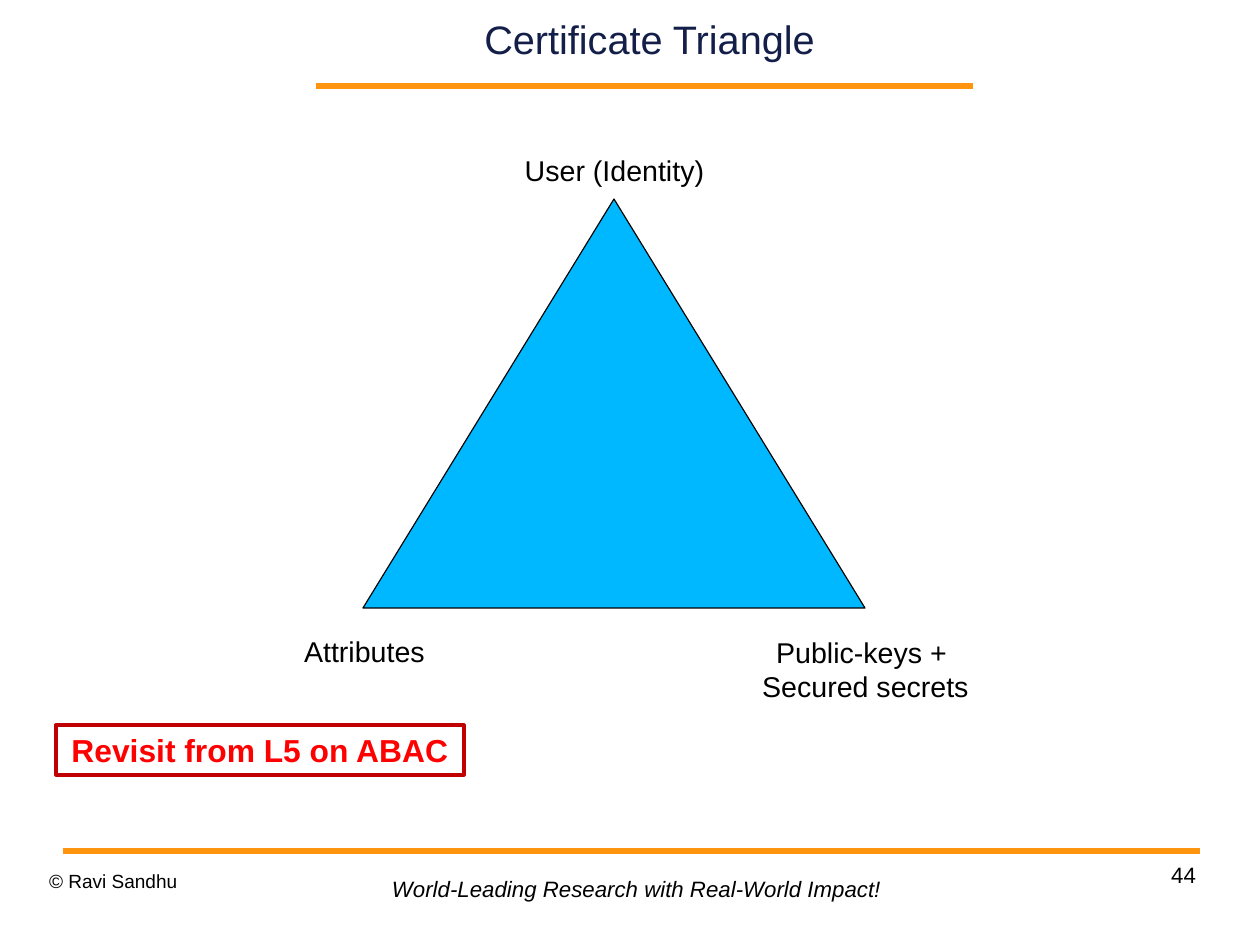
"""Build the Certificate Triangle slide."""
import pptx
import pptx.dml.color
import pptx.enum.shapes
import pptx.enum.text
import pptx.util
import lxml.etree

PX = 8000
SHAPE = pptx.enum.shapes.MSO_SHAPE
ALIGN = pptx.enum.text.PP_ALIGN
ANCHOR = pptx.enum.text.MSO_ANCHOR
FIT = pptx.enum.text.MSO_AUTO_SIZE
BLACK = "000000"

deck = pptx.Presentation()
deck.slide_width = 1260 * PX
deck.slide_height = 945 * PX
slide = deck.slides.add_slide(deck.slide_layouts[6])


def color(hex_code):
    return pptx.dml.color.RGBColor.from_string(hex_code)


def write(text, box, size=18, ink=BLACK, bold=False, italic=False,
          align=ALIGN.CENTER, anchor=ANCHOR.TOP, inset=(0, 0), wrap=True,
          grow=False, spacing=None, outline=None):
    bounds = [length * PX for length in box]
    if outline:
        holder = slide.shapes.add_shape(SHAPE.RECTANGLE, *bounds)
        holder.shadow.inherit = False
        holder.fill.background()
        holder.line.color.rgb = color(outline)
        holder.line.width = pptx.util.Pt(2)
    else:
        holder = slide.shapes.add_textbox(*bounds)
    frame = holder.text_frame
    frame.word_wrap = wrap
    frame.auto_size = FIT.SHAPE_TO_FIT_TEXT if grow else FIT.NONE
    frame.vertical_anchor = anchor
    frame.margin_left = frame.margin_right = inset[0] * PX
    frame.margin_top = frame.margin_bottom = inset[1] * PX
    frame.text = text
    for paragraph in frame.paragraphs:
        paragraph.alignment = align
        paragraph.line_spacing = spacing
        for run in paragraph.runs:
            run.font.name = "Arial"
            run.font.size = pptx.util.Pt(size)
            run.font.bold = bold
            run.font.italic = italic
            run.font.color.rgb = color(ink)


for left, right, y in [(316, 973, 86), (63, 1200, 851)]:
    rule = slide.shapes.add_connector(
        pptx.enum.shapes.MSO_CONNECTOR.STRAIGHT, left * PX, y * PX, right * PX, y * PX)
    rule.line.color.rgb = color("FF950E")
    rule.line.width = pptx.util.Pt(4.31)
    lxml.etree.SubElement(rule._element.spPr, pptx.oxml.ns.qn("a:effectLst"))

write("44", (902, 861, 294, 65), size=14, align=ALIGN.RIGHT, spacing=1.01)
write("© Ravi Sandhu", (49, 869, 294, 49), size=12, align=ALIGN.LEFT, spacing=1.01)
write("World-Leading Research with Real-World Impact!", (382, 870, 523, 38),
      size=14, italic=True, align=ALIGN.LEFT, inset=(10, 5), wrap=False, grow=True)
write("Certificate Triangle", (325, 7, 649, 64), size=25, ink="131F49",
      anchor=ANCHOR.MIDDLE)

triangle = slide.shapes.add_shape(
    SHAPE.ISOSCELES_TRIANGLE, 363 * PX, 199 * PX, 502 * PX, 409 * PX)
triangle.shadow.inherit = False
triangle.fill.solid()
triangle.fill.fore_color.rgb = color("00B8FF")
triangle.line.color.rgb = color(BLACK)
triangle.line.width = pptx.util.Pt(0.75)

for corner, left, top, height in [
    ("User (Identity)", 447, 145, 51),
    ("Attributes", 197, 626, 51),
    ("Public-keys + \nSecured secrets", 698, 627, 86),
]:
    write(corner, (left, top, 335, height), inset=(17, 8), grow=True)

write("Revisit from L5 on ABAC", (56, 725, 408, 50), size=20, ink="FF0000",
      bold=True, inset=(11, 6), grow=True, outline="C00000")

deck.save("out.pptx")
